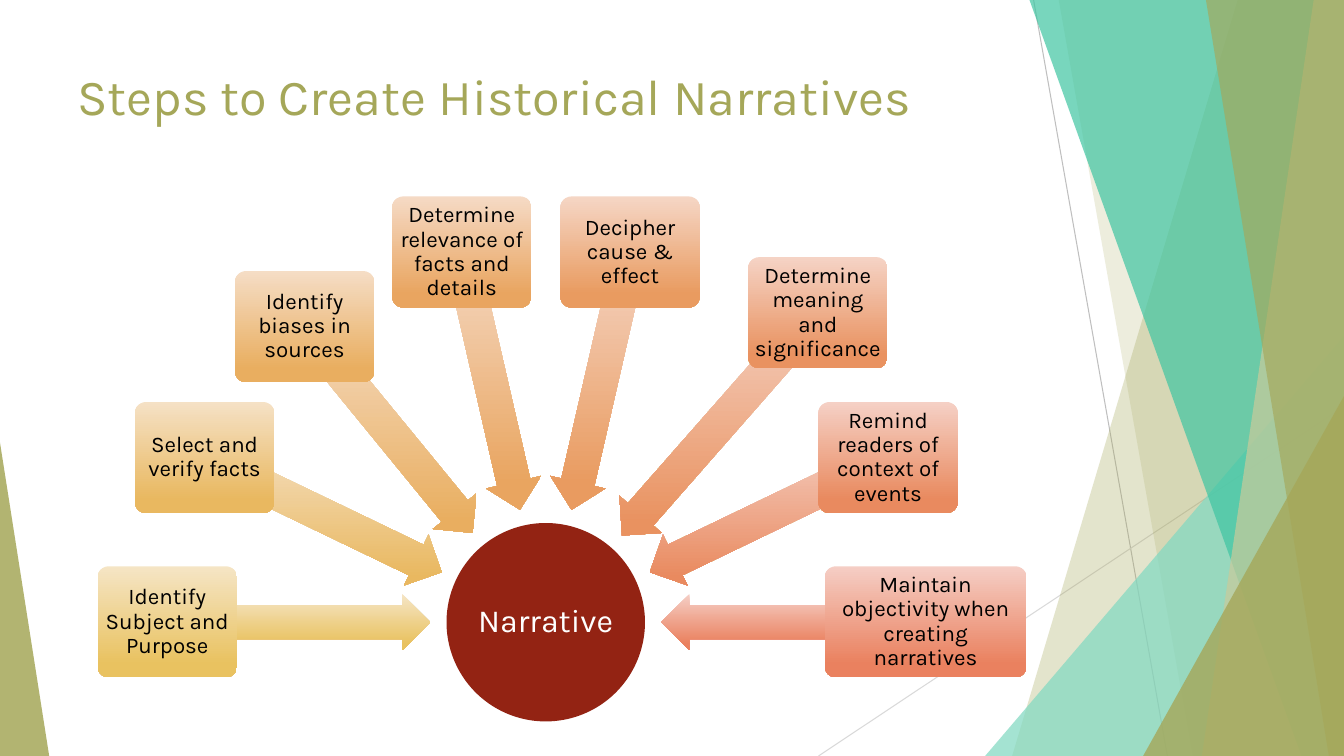
from math import cos, radians, sin

from lxml import etree
from pptx import Presentation
from pptx.dml.color import RGBColor
from pptx.enum.shapes import MSO_CONNECTOR, MSO_SHAPE
from pptx.enum.text import MSO_ANCHOR, PP_ALIGN
from pptx.oxml.ns import qn
from pptx.util import Cm, Pt

STRAIGHT = MSO_CONNECTOR.STRAIGHT
TRIANGLE = MSO_SHAPE.ISOSCELES_TRIANGLE
CIRCLE = MSO_SHAPE.OVAL
ARROW = MSO_SHAPE.LEFT_ARROW
ROUNDED = MSO_SHAPE.ROUNDED_RECTANGLE
MIDDLE = MSO_ANCHOR.MIDDLE
CENTER = PP_ALIGN.CENTER
LEFT = PP_ALIGN.LEFT

FONT = "Karla"
OLIVE = "A5A759"
SLIDE_W, SLIDE_H = 33.86, 19.05
HUB_X, HUB_Y, HUB_SIZE = 13.75, 15.68, 5
ARROW_START, ARROW_H = 2.91, 1.42
STEP_W, STEP_H = 3.51, 2.8

# label, left, top, width, arrow angle, arrow length, light colour, dark colour
STEPS = [
    ("Identify Subject and Purpose", 2.46, 14.27, STEP_W, 180, 6.65, "F5E5C5", "E9C260"),
    ("Select and verify facts", 3.4, 10.13, STEP_W, 205.7, 6.65, "F5E1C5", "E9B860"),
    ("Identify biases in sources", 5.92, 6.83, STEP_W, 230.7, 6.73, "F5DDC5", "E9AE60"),
    ("Determine relevance of facts and details", 9.88, 4.95, STEP_W, 257.1, 6.65, "F5DAC5", "E9A560"),
    ("Decipher cause & effect", 14.12, 4.95, STEP_W, 282.9, 6.65, "F5D6C5", "E99B60"),
    ("Determine meaning and significance", 18.85, 6.48, STEP_W, 311.3, 7.44, "F5D3C5", "E99260"),
    ("Remind readers of context of events", 20.62, 10.13, STEP_W, 334.3, 6.65, "F5D0C5", "E98A5F"),
    ("Maintain objectivity when creating narratives", 20.78, 14.27, 5.08, 0, 6.65, "F5CEC5", "EA815F"),
]


def rgb(colour):
    """Return the colour for a hex string."""
    return RGBColor.from_string(colour)


def paint(shape, colour, opacity=100):
    """Give a shape a plain fill with no outline or shadow."""
    shape.shadow.inherit = False
    shape.line.fill.background()
    shape.fill.solid()
    shape.fill.fore_color.rgb = rgb(colour)
    if opacity < 100:
        colour_node = shape._element.spPr.find(qn("a:solidFill"))[0]
        etree.SubElement(colour_node, qn("a:alpha")).set("val", str(opacity * 1000))


def shade(shape, light, dark):
    """Give a shape a fill that darkens downwards whatever its rotation."""
    shape.shadow.inherit = False
    shape.line.fill.background()
    shape.fill.gradient()
    shape.fill.gradient_angle = 270
    for stop, colour, position in zip(shape.fill.gradient_stops, (light, dark), (0, 0.88)):
        stop.color.rgb = rgb(colour)
        stop.position = position
    shape._element.spPr.find(qn("a:gradFill")).set("rotWithShape", "0")


def add_preset(slide, preset, left, top, width, height, *adjustments):
    """Add a preset shape with its adjustments."""
    shape = slide.shapes.add_shape(preset, Cm(left), Cm(top), Cm(width), Cm(height))
    for index, value in enumerate(adjustments):
        shape.adjustments[index] = value
    return shape


def write(shape, text, size, colour, inset, align=CENTER, spacing=0.9):
    """Write one vertically centred paragraph in a shape."""
    frame = shape.text_frame
    frame.text = text
    frame.word_wrap = True
    frame.vertical_anchor = MIDDLE
    frame.margin_left = frame.margin_right = Cm(inset)
    frame.margin_top = frame.margin_bottom = Cm(inset)
    paragraph = frame.paragraphs[0]
    paragraph.alignment = align
    paragraph.line_spacing = spacing
    font = paragraph.runs[0].font
    font.name, font.size, font.color.rgb = FONT, Pt(size), rgb(colour)


def add_hairline(slide, x1, y1, x2, y2, colour):
    """Add a thin decorative line."""
    hairline = slide.shapes.add_connector(STRAIGHT, Cm(x1), Cm(y1), Cm(x2), Cm(y2))
    hairline.line.color.rgb = rgb(colour)
    hairline.line.width = Pt(0.75)
    etree.SubElement(hairline._element.spPr, qn("a:effectLst"))


def add_band(slide, top_x, bottom_x, colour, opacity):
    """Add a slanted band reaching to the right edge of the slide."""
    top = Cm(-0.02)
    builder = slide.shapes.build_freeform(Cm(top_x), top)
    builder.add_line_segments([
        (Cm(SLIDE_W), top), (Cm(SLIDE_W), Cm(SLIDE_H)), (Cm(bottom_x), Cm(SLIDE_H)),
    ])
    paint(builder.convert_to_shape(), colour, opacity)


def add_corner(slide, left, top, width, peak, colour, opacity):
    """Add a right-angled triangle standing on the bottom edge."""
    corner = add_preset(slide, TRIANGLE, left, top, width, SLIDE_H - top, peak)
    paint(corner, colour, opacity)


def add_backdrop(slide):
    """Add the faceted decoration at the slide's edges."""
    add_hairline(slide, 26.04, 0, 29.41, SLIDE_H, "BFBFBF")
    add_hairline(slide, SLIDE_W, 10.24, 20.62, SLIDE_H, "D9D9D9")
    add_band(slide, 31.19, 25.5, OLIVE, 30)
    add_band(slide, 26.67, 30.05, OLIVE, 20)
    add_corner(slide, 24.82, 8.46, 9.04, 1, "81D9C2", 72)
    add_band(slide, 25.93, 32.79, "3FC5A2", 70)
    add_band(slide, 33.1, 30.28, "C9CA9B", 70)
    add_band(slide, 30.38, 33.48, OLIVE, 65)
    add_corner(slide, 28.8, 9.98, 5.06, 1, OLIVE, 80)
    add_corner(slide, 0, 11.15, 1.24, 0, OLIVE, 85)


def add_title(slide, text):
    """Add the slide title."""
    title = slide.shapes.add_textbox(Cm(1.7), Cm(1.45), Cm(23.88), Cm(1.93))
    write(title, text, 36, OLIVE, 0.25, LEFT, 1)


def add_hub(slide, text):
    """Add the circle that every step points to."""
    hub = add_preset(slide, CIRCLE, HUB_X - HUB_SIZE / 2, HUB_Y - HUB_SIZE / 2, HUB_SIZE, HUB_SIZE)
    paint(hub, "932313")
    write(hub, text, 23, "FFFFFF", 0.05)


def add_step(slide, label, left, top, width, angle, length, light, dark):
    """Add a step box and its arrow aimed at the hub."""
    reach = ARROW_START + length / 2
    center_x = HUB_X + reach * cos(radians(angle))
    center_y = HUB_Y + reach * sin(radians(angle))
    arrow = add_preset(slide, ARROW, center_x - length / 2, center_y - ARROW_H / 2,
                       length, ARROW_H, 0.6, 0.5)
    arrow.rotation = angle
    shade(arrow, light, dark)
    step = add_preset(slide, ROUNDED, left, top, width, STEP_H, 0.1)
    shade(step, light, dark)
    write(step, label, 16, "000000", 0.08)


def main():
    """Build and save the slide."""
    deck = Presentation()
    deck.slide_width, deck.slide_height = Cm(SLIDE_W), Cm(SLIDE_H)
    slide = deck.slides.add_slide(deck.slide_layouts[6])
    add_backdrop(slide)
    add_title(slide, "Steps to Create Historical Narratives")
    add_hub(slide, "Narrative")
    for step in STEPS:
        add_step(slide, *step)
    deck.save("out.pptx")


if __name__ == "__main__":
    main()
